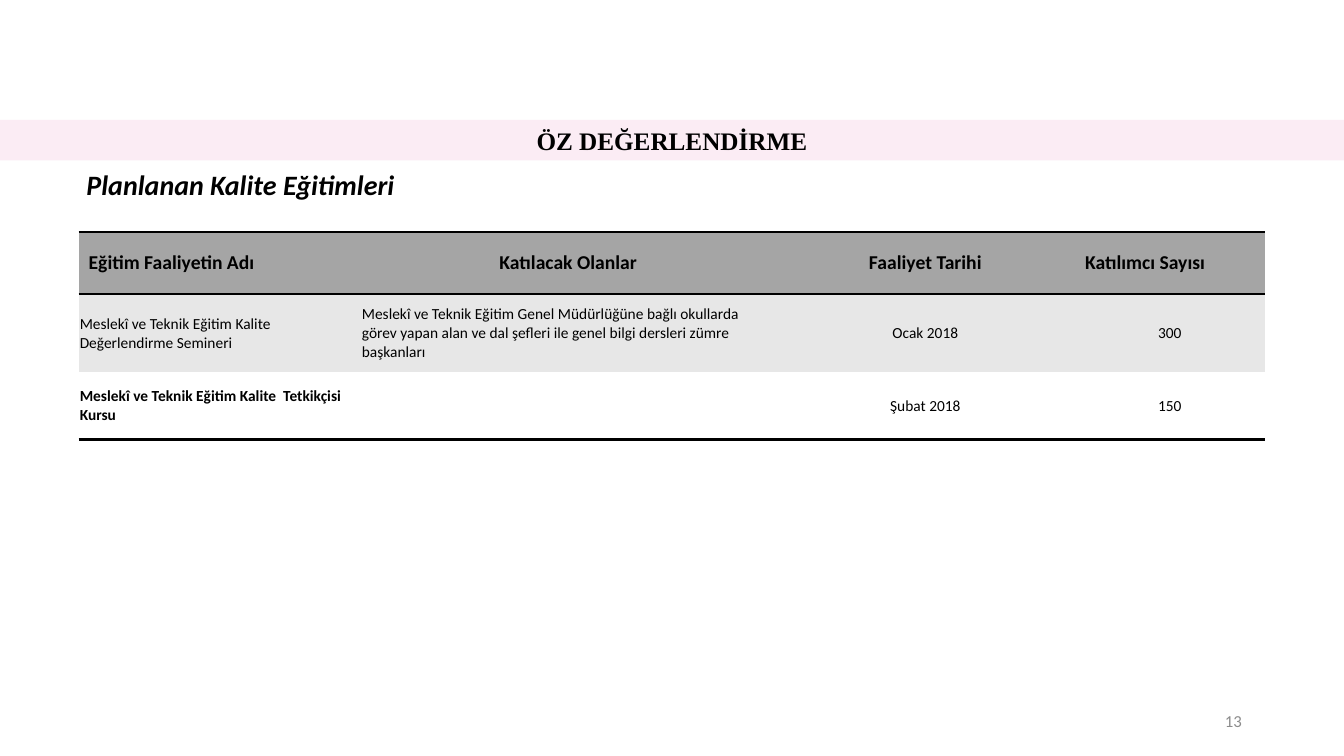
from dataclasses import dataclass

from lxml import etree
from pptx import Presentation
from pptx.dml.color import RGBColor
from pptx.enum.text import MSO_ANCHOR, MSO_AUTO_SIZE, PP_ALIGN
from pptx.oxml.ns import qn
from pptx.util import Cm, Pt

LEFT, CENTER, RIGHT = PP_ALIGN.LEFT, PP_ALIGN.CENTER, PP_ALIGN.RIGHT
TOP, MIDDLE = MSO_ANCHOR.TOP, MSO_ANCHOR.MIDDLE
NO_AUTOFIT = MSO_AUTO_SIZE.NONE
TITLE_ONLY = 5
PLAIN_TABLE = "{2D5ABB26-0587-4C30-8999-92F81FD0307C}"


@dataclass(frozen=True)
class Theme:
    ink: str = "000000"
    muted: str = "8C8C8C"
    banner: str = "F5C3DD"
    banner_opacity: int = 30
    header: str = "A5A5A5"
    band: str = "E7E7E7"
    paper: str = "FFFFFF"
    body_font: str = "Calibri"
    title_font: str = "Times New Roman"
    title_size: int = 18
    subtitle_size: int = 20
    header_size: int = 14
    cell_size: int = 11
    number_size: int = 12
    rule_width: int = 2


THEME = Theme()

COLUMN_WIDTHS = (7.11, 10.46, 7.54, 4.78)
ROW_HEIGHTS = (1.57, 1.96, 1.7)
ROW_FILLS = (THEME.header, THEME.band, THEME.paper)
HEADER_ALIGNMENTS = (LEFT, CENTER, CENTER, LEFT)
BODY_ALIGNMENTS = (LEFT, LEFT, CENTER, CENTER)
TRAININGS = (
    ("Eğitim Faaliyetin Adı", "Katılacak Olanlar", "Faaliyet Tarihi", "Katılımcı Sayısı"),
    (
        "Meslekî ve Teknik Eğitim Kalite Değerlendirme Semineri",
        "Meslekî ve Teknik Eğitim Genel Müdürlüğüne bağlı okullarda görev yapan "
        "alan ve dal şefleri ile genel bilgi dersleri zümre başkanları",
        "Ocak 2018",
        "300",
    ),
    ("Meslekî ve Teknik Eğitim Kalite  Tetkikçisi Kursu", "", "Şubat 2018", "150"),
)


def apply(target, values):
    for name, value in values.items():
        setattr(target, name, value)


def write(frame, text, size, align=LEFT, color=THEME.ink, **font_values):
    frame.text = text
    paragraph = frame.paragraphs[0]
    paragraph.alignment = align
    apply(paragraph.font, {"name": THEME.body_font, "size": Pt(size), **font_values})
    paragraph.font.color.rgb = RGBColor.from_string(color)
    return paragraph


def place(shape, left, top, width, height):
    sides = {"left": left, "top": top, "width": width, "height": height}
    apply(shape, {side: Cm(length) for side, length in sides.items()})


def add_banner(slide, text):
    banner = slide.shapes.title
    place(banner, 0, 3.02, 33.87, 1.02)
    banner.fill.solid()
    banner.fill.fore_color.rgb = RGBColor.from_string(THEME.banner)
    color = banner.fill._xPr.find(qn("a:solidFill"))[0]
    etree.SubElement(color, qn("a:alpha"), val=str(THEME.banner_opacity * 1000))
    frame = banner.text_frame
    write(frame, text, THEME.title_size, CENTER, name=THEME.title_font, bold=True)
    apply(frame, {"auto_size": NO_AUTOFIT, "vertical_anchor": MIDDLE, "word_wrap": True})


def add_label(slide, text, bounds, size, anchor=TOP, **text_values):
    label = slide.shapes.add_textbox(*(Cm(length) for length in bounds))
    apply(label.text_frame, {"word_wrap": True, "vertical_anchor": anchor})
    return write(label.text_frame, text, size, **text_values)


def add_border(cell, side):
    border = etree.SubElement(
        cell._tc.get_or_add_tcPr(), qn(f"a:{side}"), w=str(Pt(THEME.rule_width))
    )
    fill = etree.SubElement(border, qn("a:solidFill"))
    etree.SubElement(fill, qn("a:srgbClr"), val=THEME.ink)


def format_cell(cell, text, row, column):
    is_header = row == 0
    cell.vertical_anchor = MIDDLE
    if is_header:
        add_border(cell, "lnT")
    else:
        margin = Cm(0.03)
        apply(cell, {
            "margin_left": margin, "margin_right": margin,
            "margin_top": margin, "margin_bottom": 0,
        })
    if row in (0, len(TRAININGS) - 1):
        add_border(cell, "lnB")
    cell.fill.solid()
    cell.fill.fore_color.rgb = RGBColor.from_string(ROW_FILLS[row])
    write(
        cell.text_frame,
        text,
        THEME.header_size if is_header else THEME.cell_size,
        (HEADER_ALIGNMENTS if is_header else BODY_ALIGNMENTS)[column],
        bold=is_header or (row == 2 and column == 0),
    )


def add_training_table(slide):
    table = slide.shapes.add_table(
        len(ROW_HEIGHTS), len(COLUMN_WIDTHS), Cm(1.98), Cm(5.84),
        Cm(sum(COLUMN_WIDTHS)), Cm(sum(ROW_HEIGHTS)),
    ).table
    apply(table, {"first_row": True, "horz_banding": False})
    table._tbl.tblPr.find(qn("a:tableStyleId")).text = PLAIN_TABLE
    for column, width in zip(table.columns, COLUMN_WIDTHS):
        column.width = Cm(width)
    for row, height in zip(table.rows, ROW_HEIGHTS):
        row.height = Cm(height)
    for row, texts in enumerate(TRAININGS):
        for column, text in enumerate(texts):
            format_cell(table.cell(row, column), text, row, column)


def main():
    deck = Presentation()
    apply(deck, {"slide_width": Cm(33.87), "slide_height": Cm(19.05)})
    slide = deck.slides.add_slide(deck.slide_layouts[TITLE_ONLY])
    add_banner(slide, "ÖZ DEĞERLENDİRME")
    subtitle = add_label(
        slide, "Planlanan Kalite Eğitimleri", (1.93, 4.19, 29.21, 1.09),
        THEME.subtitle_size, bold=True, italic=True,
    )
    subtitle.line_spacing = 0.9
    add_training_table(slide)
    add_label(
        slide, "13", (23.93, 17.65, 7.62, 1.02), THEME.number_size,
        anchor=MIDDLE, align=RIGHT, color=THEME.muted,
    )
    deck.save("out.pptx")


if __name__ == "__main__":
    main()
